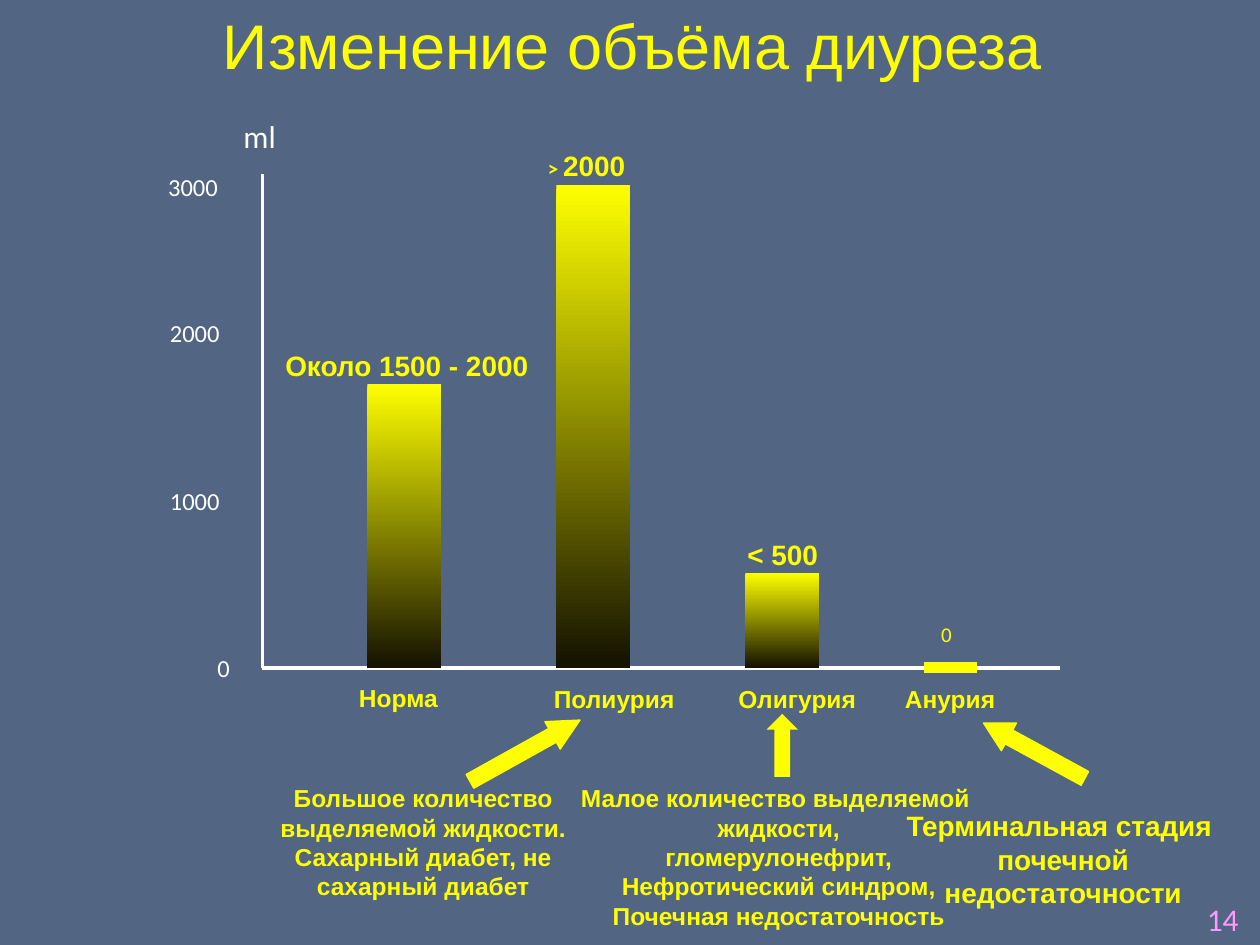
from pptx import Presentation
from pptx.dml.color import RGBColor
from pptx.enum.shapes import MSO_CONNECTOR, MSO_SHAPE
from pptx.enum.text import MSO_AUTO_SIZE, PP_ALIGN
from pptx.oxml.ns import qn
from pptx.util import Pt
from lxml import etree

LINE = MSO_CONNECTOR.STRAIGHT
RECT, ARROW = MSO_SHAPE.RECTANGLE, MSO_SHAPE.UP_ARROW
LEFT, MID = PP_ALIGN.LEFT, PP_ALIGN.CENTER
GROW = MSO_AUTO_SIZE.SHAPE_TO_FIT_TEXT

COLORS = {
    "back": "526582",
    "main": "FFFF00",
    "dark": "141200",
    "axis": "FFFFFF",
    "page": "FF99FF",
}


def color(name):
    return RGBColor.from_string(COLORS[name])


def run(text, size, bold=False, font="Arial", tone="main"):
    return text, size, bold, font, tone


def add_text(slide, box, paras, align=LEFT, wrap=False):
    """Each paragraph is a list of runs."""
    frame = slide.shapes.add_textbox(*map(Pt, box)).text_frame
    frame.word_wrap = wrap
    frame.auto_size = GROW
    for i, runs in enumerate(paras):
        para = frame.add_paragraph() if i else frame.paragraphs[0]
        para.alignment = align
        for text, size, bold, font, tone in runs:
            part = para.add_run()
            part.text = text
            part.font.size = Pt(size)
            part.font.bold = bold
            part.font.name = font
            part.font.color.rgb = color(tone)


def add_line(slide, ends, width, tone):
    line = slide.shapes.add_connector(LINE, *map(Pt, ends))
    line.line.width = Pt(width)
    line.line.color.rgb = color(tone)
    etree.SubElement(line._element.spPr, qn("a:effectLst"))


def add_bar(slide, box):
    bar = slide.shapes.add_shape(RECT, *map(Pt, box))
    bar.shadow.inherit = False
    bar.line.fill.background()
    bar.fill.gradient()
    bar.fill.gradient_angle = 270
    for stop, place, tone in zip(bar.fill.gradient_stops, (0, 1), ("main", "dark")):
        stop.position = place
        stop.color.rgb = color(tone)


def add_arrow(slide, box, turn, head, edge):
    arrow = slide.shapes.add_shape(ARROW, *map(Pt, box))
    arrow.shadow.inherit = False
    arrow.adjustments[0] = 0.5
    arrow.adjustments[1] = head
    arrow.rotation = turn
    arrow.fill.solid()
    arrow.fill.fore_color.rgb = color("main")
    if edge:
        arrow.line.color.rgb = color("main")
        arrow.line.width = Pt(0.75)
    else:
        arrow.line.fill.background()


def draw_title(slide, box):
    add_text(slide, box, [[run("Изменение объёма диуреза", 36)]], MID, True)


def draw_axes(slide, box):
    x, y, w, h = box
    base = y + h
    add_line(slide, (x, y, x, base), 2.25, "axis")
    add_line(slide, (x, base, x + w, base), 2.25, "axis")

    # Unit and scale: text, size, offset from the axis top, width, height
    marks = [
        ("ml", 18, -18, -36, 33, 29),
        ("3000", 14, -61, -5, 50, 24),
        ("2000", 14, -60, 78.5, 50, 24),
        ("1000", 14, -60, 174.5, 50, 24),
        (" 0", 14, -36, 270, 27, 24),
    ]
    for text, size, dx, dy, wide, high in marks:
        add_text(slide, (x + dx, y + dy, wide, high),
                 [[run(text, size, font="Calibri", tone="axis")]])


def draw_bars(slide, box):
    x, y, w, h = box
    base = y + h
    first, step, wide = x + 60, 108, 42
    for i, high in enumerate((162, 276, 54)):
        add_bar(slide, (first + i * step, base - high, wide, high))
    add_line(slide, (x + 378, base, x + 408, base), 6, "main")

    # Values: runs, offset from the origin, width, height
    values = [
        ([run("Около 1500 - 2000", 16, True)], 6, -186, 155, 26.6),
        ([run("> ", 12, True, "Calibri"), run("2000", 16, True)], 156, -300, 59, 26.6),
        ([run("< 500", 16, True)], 270, -78, 55.5, 26.6),
        ([run(" 0", 12, font="Calibri")], 378, -30, 26, 21.6),
    ]
    for runs, dx, dy, wide, high in values:
        add_text(slide, (x + dx, base + dy, wide, high), [runs])

    # Names: runs, offset from the origin, width, alignment, wrap
    names = [
        ([run(" ", 12, font="Calibri"), run("Норма", 14, True)], 38.5, 5, 75.6, MID, True),
        ([run("Полиурия", 14, True)], 150, 6, 102, MID, True),
        ([run(" ", 14), run("Олигурия", 14, True)], 261, 6, 85.7, LEFT, False),
        ([run("Анурия", 14, True)], 360, 6, 66, LEFT, False),
    ]
    for runs, dx, dy, wide, align, wrap in names:
        add_text(slide, (x + dx, base + dy, wide, 24.5), [runs], align, wrap)


def draw_notes(slide, box):
    x, y, w, h = box
    # Lines, size, offset, width, height, wrap
    notes = [
        (["Большое количество выделяемой жидкости. Сахарный диабет, не сахарный диабет"],
         14, 0, 51, 183.6, 75, True),
        (["Малое количество выделяемой ", "жидкости,", "гломерулонефрит,",
          "Нефротический синдром,", "Почечная недостаточность"],
         14, 174, 51, 242, 92, False),
        (["Терминальная стадия ", "почечной недостаточности"],
         16, 358.5, 65.5, 198, 65.5, True),
    ]
    for lines, size, dx, dy, wide, high, wrap in notes:
        paras = [[run(line, size, True)] for line in lines]
        add_text(slide, (x + dx, y + dy, wide, high), paras, MID, wrap)

    # Arrows: offset, length, turn, head, edge
    arrows = [
        (141, 0, 72, 60.9, 1, True),
        (288, 15, 36, 0, 0.5, False),
        (432, 3, 66, 298.6, 0.92, True),
    ]
    for dx, dy, long, turn, head, edge in arrows:
        add_arrow(slide, (x + dx, y + dy, 18, long), turn, head, edge)


def draw_page(slide, box):
    add_text(slide, box, [[run("14", 18, font="Calibri", tone="page")]])


def main():
    deck = Presentation()
    deck.slide_width, deck.slide_height = Pt(720), Pt(540)
    slide = deck.slides.add_slide(deck.slide_layouts[6])
    slide.background.fill.solid()
    slide.background.fill.fore_color.rgb = color("back")

    plot = (150, 99.5, 456, 282)
    draw_title(slide, (1.5, 0, 720, 51))
    draw_axes(slide, plot)
    draw_bars(slide, plot)
    draw_notes(slide, (150, 393, 556.5, 143.5))
    draw_page(slide, (682.5, 511, 37.5, 29))
    deck.save("out.pptx")


if __name__ == "__main__":
    main()
